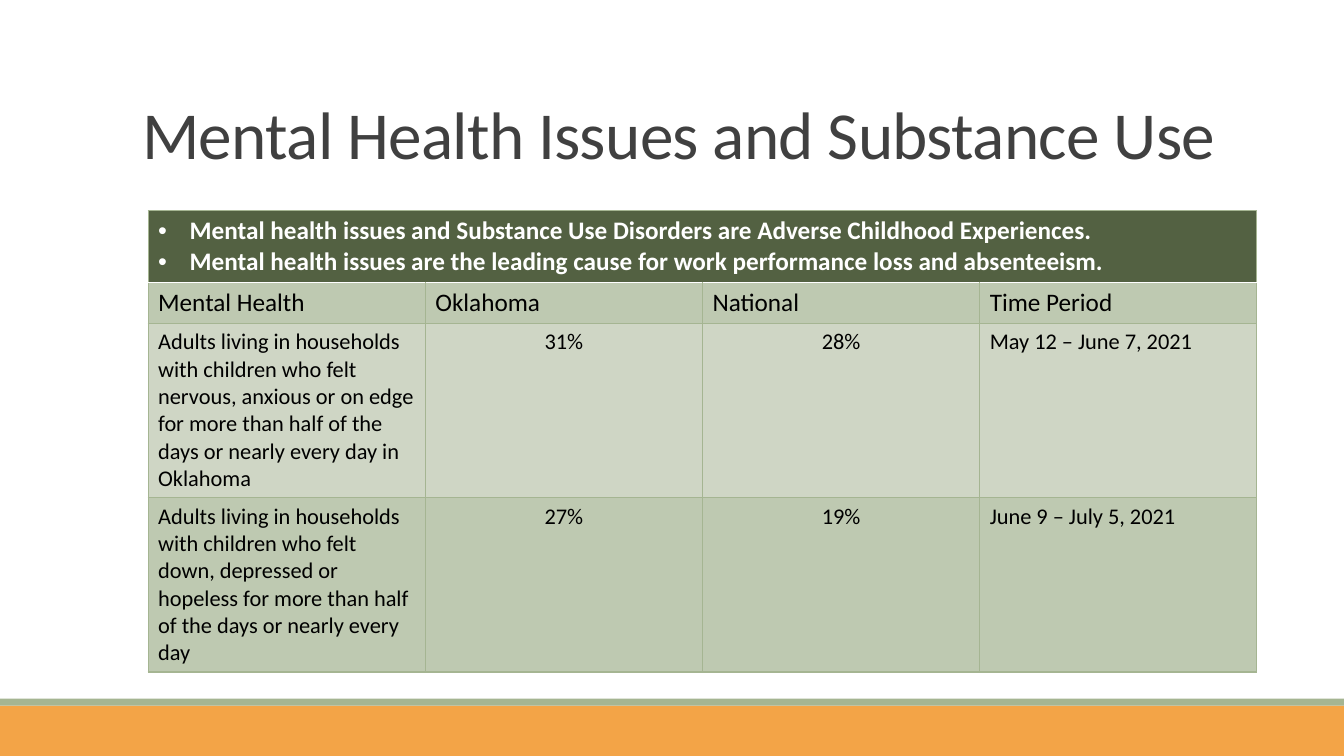
from lxml import etree
from pptx import Presentation
from pptx import util as u
from pptx.dml.color import RGBColor
from pptx.enum import shapes, text
from pptx.oxml import ns

Pt = u.Pt
ORANGE = RGBColor(0xF3, 0xA4, 0x47)
SAGE = RGBColor(0xA5, 0xB5, 0x92)
OLIVE = RGBColor(0x53, 0x61, 0x42)
PALE = RGBColor(0xCF, 0xD6, 0xC5)
BAND = RGBColor(0xBE, 0xC9, 0xB1)
GREY = RGBColor(0x40, 0x40, 0x40)
WHITE = RGBColor(0xFF, 0xFF, 0xFF)
BLACK = RGBColor(0, 0, 0)

HEAD = [
    "Mental health issues and Substance Use Disorders are Adverse Childhood Experiences.",
    "Mental health issues are the leading cause for work performance loss and absenteeism.",
]
ROWS = [
    ["Mental Health", "Oklahoma", "National", "Time Period"],
    ["Adults living in households with children who felt nervous, anxious or on edge "
     "for more than half of the days or nearly every day in Oklahoma",
     "31%", "28%", "May 12 – June 7, 2021"],
    ["Adults living in households with children who felt down, depressed or hopeless "
     "for more than half of the days or nearly every day",
     "27%", "19%", "June 9 – July 5, 2021"],
]
HEIGHTS = [51.2, 29.2, 124.6, 124.6]


def write(frame, lines, size=16, color=BLACK, bold=False, align=None,
          space=None, track=None, bullet=False):
    for i, line in enumerate(lines):
        para = frame.add_paragraph() if i else frame.paragraphs[0]
        para.alignment = align
        para.line_spacing = space
        run = para.add_run()
        run.text = line
        font = run.font
        font.name, font.size, font.bold = "Calibri", Pt(size), bold
        font.color.rgb = color
        if track:
            run._r.get_or_add_rPr().set("spc", str(track))
        if bullet:
            props = para._p.get_or_add_pPr()
            props.set("marL", str(Pt(22.5)))
            props.set("indent", str(-Pt(22.5)))
            etree.SubElement(props, ns.qn("a:buFont"), typeface="Arial")
            etree.SubElement(props, ns.qn("a:buChar"), char="•")


def bar(slide, top, height, color):
    rect = slide.shapes.add_shape(
        shapes.MSO_SHAPE.RECTANGLE, 0, Pt(top), Pt(960), Pt(height))
    rect.shadow.inherit = False
    rect.fill.solid()
    rect.fill.fore_color.rgb = color
    rect.line.fill.background()


def title(slide, words):
    box = slide.shapes.add_textbox(Pt(94.5), Pt(66), Pt(792), Pt(61.5))
    frame = box.text_frame
    frame.word_wrap = True
    frame.vertical_anchor = text.MSO_ANCHOR.BOTTOM
    write(frame, [words], size=48, color=GREY, space=0.85, track=-50)


def edge(cell, side, color, width):
    line = etree.SubElement(
        cell._tc.get_or_add_tcPr(), ns.qn("a:ln" + side), w=str(Pt(width)))
    fill = etree.SubElement(line, ns.qn("a:solidFill"))
    etree.SubElement(fill, ns.qn("a:srgbClr"), val=str(color))


def paint(cell, row, color):
    rule = (WHITE, 1.25)
    for side in "LRTB":
        seam = (row, side) in ((0, "B"), (1, "T"))
        edge(cell, side, *(rule if seam else (SAGE, 1)))
    cell.fill.solid()
    cell.fill.fore_color.rgb = color


def grid(slide):
    table = slide.shapes.add_table(
        len(HEIGHTS), 4, Pt(105.8), Pt(150.5), Pt(792), Pt(sum(HEIGHTS))).table
    for row, high in enumerate(HEIGHTS):
        table.rows[row].height = Pt(high)
        for col in range(4):
            paint(table.cell(row, col), row, [OLIVE, BAND, PALE, BAND][row])
    table.cell(0, 0).merge(table.cell(0, 3))
    write(table.cell(0, 0).text_frame, HEAD, size=18, color=WHITE,
          bold=True, bullet=True)
    for row, words in enumerate(ROWS, 1):
        for col, word in enumerate(words):
            mid = row > 1 and col in (1, 2)
            write(table.cell(row, col).text_frame, [word],
                  size=18 if row == 1 else 16,
                  align=text.PP_ALIGN.CENTER if mid else None)


def main():
    deck = Presentation()
    deck.slide_width, deck.slide_height = Pt(960), Pt(540)
    slide = deck.slides.add_slide(deck.slide_layouts[6])
    bar(slide, 504, 36, ORANGE)
    bar(slide, 499, 5, SAGE)
    title(slide, "Mental Health Issues and Substance Use")
    grid(slide)
    deck.save("out.pptx")


if __name__ == "__main__":
    main()
